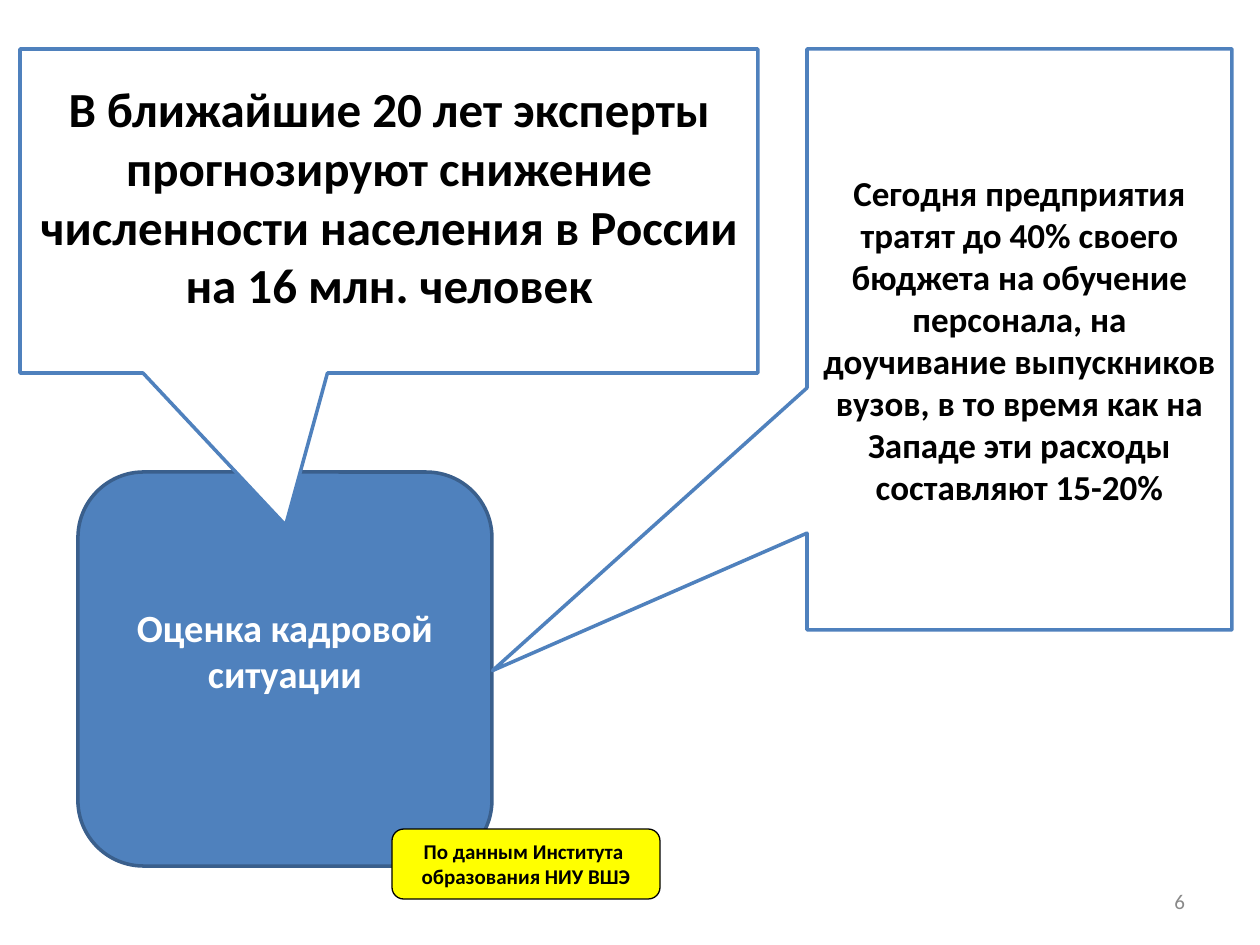
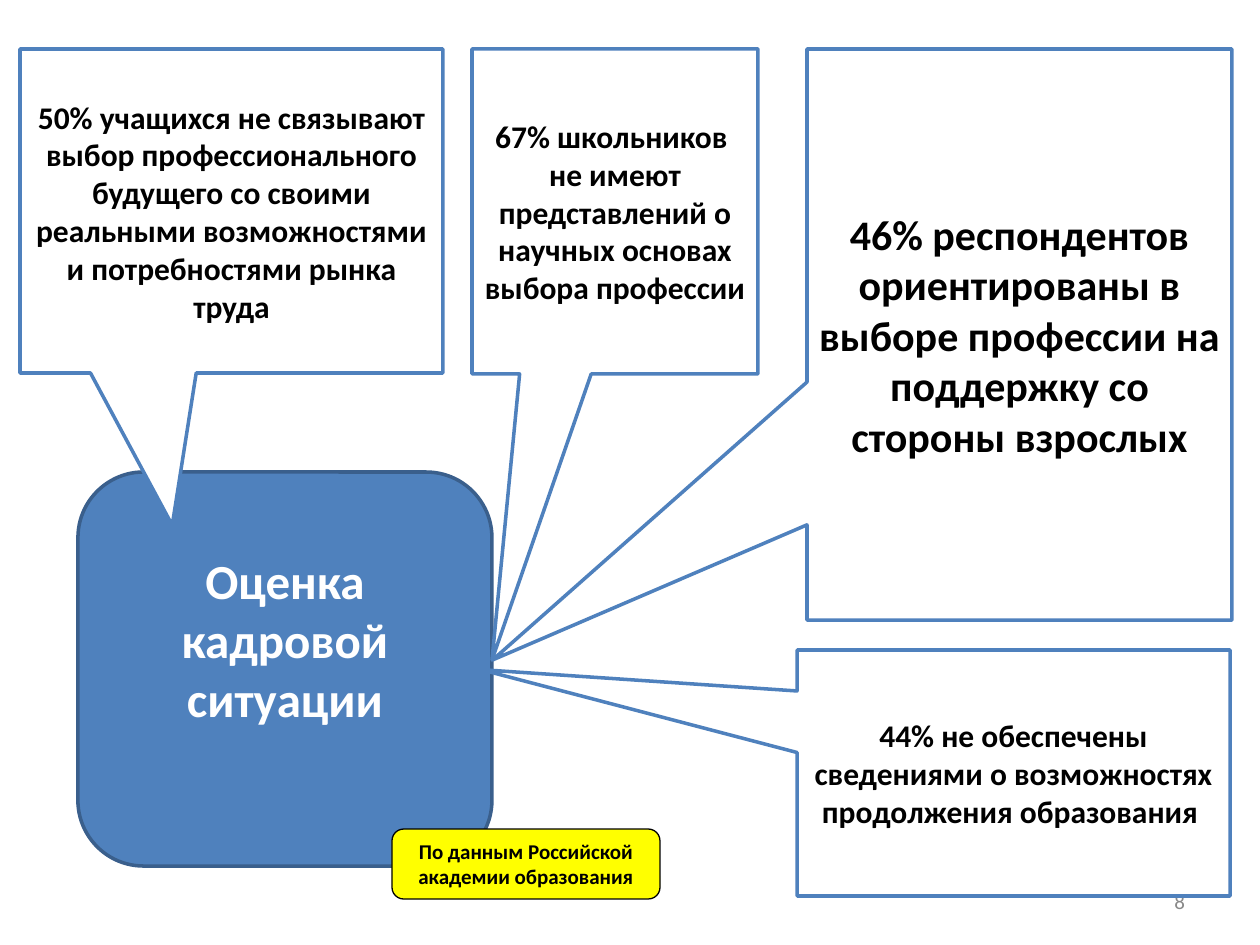
"""Build two slides of callouts about the staffing situation."""
import pptx
import pptx.util
import pptx.dml.color
import pptx.enum.shapes
import pptx.enum.text

HUE = {"blue": "4F81BD", "edge": "3A5F8C", "white": "FFFFFF",
       "black": "000000", "gold": "FFFF00", "gray": "898989"}
FONT = "Calibri"
SCALE = 914400 / 126
KIND = pptx.enum.shapes.MSO_SHAPE
ALIGN = pptx.enum.text.PP_ALIGN
MID = pptx.enum.text.MSO_ANCHOR.MIDDLE


def px(num):
    return pptx.util.Emu(round(num * SCALE))


def put(slide, text, box, size, kind=None, fill=None, line=None, width=2,
        adjs=(), color="black", bold=True, align=ALIGN.CENTER, low=6):
    area = [px(num) for num in box]
    if kind is None:
        shape = slide.shapes.add_textbox(*area)
    else:
        shape = slide.shapes.add_shape(kind, *area)
        shape.shadow.inherit = False
        shape.fill.solid()
        shape.fill.fore_color.rgb = pptx.dml.color.RGBColor.from_string(HUE[fill])
        shape.line.color.rgb = pptx.dml.color.RGBColor.from_string(HUE[line])
        shape.line.width = pptx.util.Pt(width)
        for spot, adj in enumerate(adjs):
            shape.adjustments[spot] = adj
    frame = shape.text_frame
    frame.word_wrap = True
    frame.vertical_anchor = MID
    frame.margin_left = frame.margin_right = px(12)
    frame.margin_top, frame.margin_bottom = px(6), px(low)
    frame.text = text
    for para in frame.paragraphs:
        para.alignment = align
        for run in para.runs:
            run.font.name = FONT
            run.font.size = pptx.util.Pt(size)
            run.font.bold = bold
            run.font.color.rgb = pptx.dml.color.RGBColor.from_string(HUE[color])


TOP = 49
SLIDES = [
    {"page": "6", "size": 22, "low": 44,
     "source": "По данным Института \nобразования НИУ ВШЭ",
     "calls": [
         ("В ближайшие 20 лет эксперты прогнозируют снижение численности "
          "населения в России на 16 млн. человек",
          (20, TOP, 738, 324), 28, (-0.14, 0.97), 36),
         ("Сегодня предприятия тратят до 40% своего бюджета на обучение "
          "персонала, на доучивание выпускников вузов, в то время как на "
          "Западе эти расходы составляют 15-20%",
          (807, TOP, 425, 581), 20, (-1.24, 0.57), 6)]},
    {"page": "8", "size": 28, "low": 66,
     "source": "По данным Российской академии образования",
     "calls": [
         ("50% учащихся не связывают выбор профессионального будущего со "
          "своими реальными возможностями и потребностями рынка труда",
          (20, TOP, 423, 324), 18, (-0.14, 0.97), 6),
         ("44% не обеспечены сведениями о возможностях продолжения "
          "образования ",
          (797, 650, 433, 246), 18, (-1.23, -0.42), 6),
         ("46% респондентов ориентированы в выборе профессии на поддержку "
          "со стороны взрослых",
          (807, TOP, 425, 571), 24, (-1.24, 0.57), 6),
         ("67% школьников \nне имеют представлений о научных основах "
          "выбора профессии",
          (472, TOP, 286, 325), 18, (-0.43, 1.38), 6)]},
]

deck = pptx.Presentation()
deck.slide_width, deck.slide_height = px(1260), px(945)

for data in SLIDES:
    slide = deck.slides.add_slide(deck.slide_layouts[6])
    put(slide, "Оценка кадровой ситуации", (78, 472, 414, 394), data["size"],
        kind=KIND.ROUNDED_RECTANGLE, fill="blue", line="edge",
        color="white", low=data["low"])
    put(slide, data["page"], (903, 876, 294, 50), 12,
        color="gray", bold=False, align=ALIGN.RIGHT)
    for text, box, size, tip, low in data["calls"]:
        put(slide, text, box, size, kind=KIND.RECTANGULAR_CALLOUT,
            fill="white", line="blue", adjs=tip, low=low)
    put(slide, data["source"], (392, 829, 268, 70), 12,
        kind=KIND.ROUNDED_RECTANGLE, fill="gold", line="black", width=0.75)

deck.save("out.pptx")
